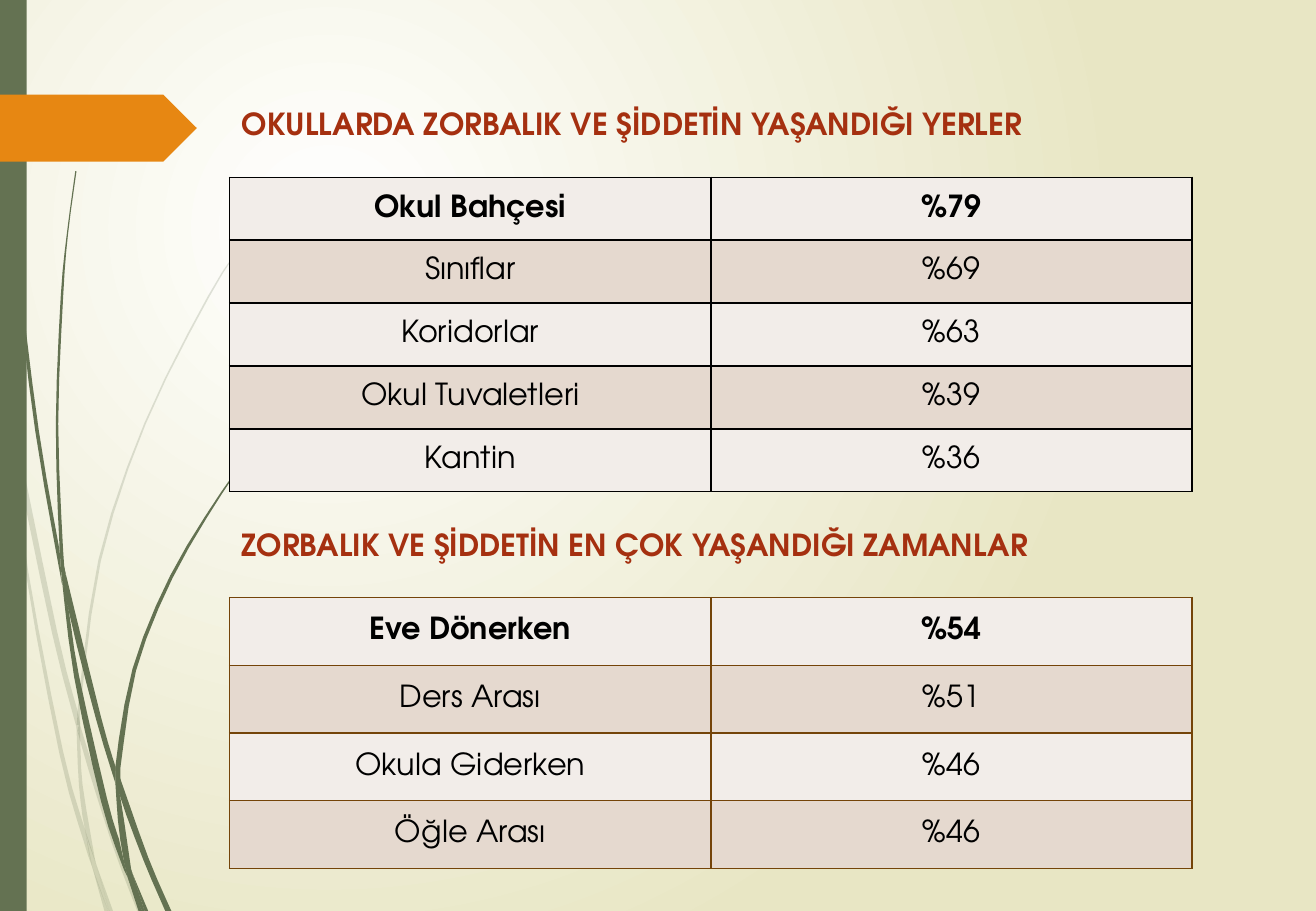
from dataclasses import dataclass

from lxml.etree import Element, SubElement
from pptx import Presentation
from pptx.dml.color import RGBColor as Rgb
from pptx.enum.shapes import MSO_SHAPE as Preset
from pptx.enum.text import MSO_ANCHOR as Anchor, MSO_AUTO_SIZE as AutoSize, PP_ALIGN as Align
from pptx.oxml.ns import qn
from pptx.util import Inches, Pt


@dataclass(frozen=True)
class Theme:
    """Colours, font and sizes of the slide."""
    font: str = "TeX Gyre Adventor"
    text_size: int = 18
    border_width: int = 1
    glow: str = "FFFFFF"
    sand: str = "E8E6C4"
    green: str = "647252"
    orange: str = "E78712"
    heading: str = "A53010"
    ink: str = "000000"
    brown: str = "744409"
    row_fills: tuple = ("F2EDE9", "E5D9CF")


SLIDE_WIDTH, SLIDE_HEIGHT = 10.83, 7.5
CONTENT_LEFT, CONTENT_WIDTH = 1.89, 7.92

# Each piece of grass has two edges, listed as (x, y) points in inches.
PALE_GRASS = [
    ([(0.08, 3.5), (0.06, 3.22), (0, 2.82)], [(0, 2.99), (0.08, 3.44)]),
    ([(0.11, 3.45), (0.13, 3.76), (0.43, 5.22), (0.63, 5.99)],
     [(0.64, 5.86), (0.47, 5.2), (0.11, 3.45)]),
    ([(0.66, 5.96), (0.66, 6.1), (0.92, 6.94), (1.13, 7.5)],
     [(1.17, 7.5), (0.96, 6.92), (0.69, 6.07), (0.66, 5.96)]),
    ([(0.79, 7.11), (0.9, 7.5)], [(0.93, 7.5), (0.79, 7.11)]),
    ([(0.08, 3.5), (0.21, 4.7), (0.49, 6.21), (0.69, 6.93), (0.76, 7.14)],
     [(0.7, 6.83), (0.52, 6.19), (0.23, 4.69), (0.13, 3.76), (0.08, 3.5)]),
    ([(0.63, 5.99), (0.65, 6.46), (0.7, 6.83), (0.79, 7.11)],
     [(0.78, 7.06), (0.68, 6.46), (0.66, 6.1), (0.63, 5.99)]),
    ([(2.35, 1.53), (2.02, 1.97), (1.71, 2.44), (1.19, 3.48), (0.81, 4.61),
      (0.64, 5.84), (0.66, 5.96)],
     [(0.66, 5.84), (0.83, 4.62), (1.2, 3.49), (1.72, 2.45), (2.02, 1.98), (2.35, 1.54)]),
    ([(0.76, 7.14), (0.86, 7.5)], [(0.89, 7.5), (0.76, 7.14)]),
    ([(0.64, 5.86), (0.63, 5.99)], [(0.66, 6.1), (0.66, 5.96)]),
    ([(0.7, 6.83), (0.76, 7.14), (0.89, 7.5)], [(0.9, 7.5), (0.79, 7.11), (0.7, 6.83)]),
]
GREEN_GRASS = [
    ([(0.02, 0), (0.06, 1.1), (0.15, 2.33), (0.29, 3.55), (0.51, 4.81)],
     [(0.49, 4.53), (0.32, 3.55), (0.17, 2.32), (0.07, 1.09), (0.03, 0)]),
    ([(0.54, 4.72), (0.57, 5.05), (0.79, 5.92), (0.95, 6.45)],
     [(0.95, 6.31), (0.83, 5.9), (0.54, 4.72)]),
    ([(0.99, 6.41), (0.99, 6.56), (1.18, 7.08), (1.36, 7.5)],
     [(1.41, 7.5), (1.22, 7.06), (0.99, 6.41)]),
    ([(0.51, 4.77), (0.61, 5.57), (0.83, 6.59), (0.99, 7.08), (1.05, 7.22)],
     [(0.98, 6.91), (0.88, 6.57), (0.65, 5.56), (0.57, 5.05), (0.51, 4.77)]),
    ([(0.62, 1.41), (0.55, 1.93), (0.5, 2.45), (0.46, 3.49), (0.49, 4.49), (0.53, 4.72)],
     [(0.54, 4.72), (0.52, 4.53), (0.48, 3.49), (0.52, 2.45), (0.56, 1.93), (0.63, 1.41)]),
    ([(1.09, 7.19), (1.19, 7.5)], [(1.22, 7.5), (1.09, 7.19)]),
    ([(0.49, 4.49), (0.51, 4.77), (0.57, 5.05)], [(0.54, 4.72), (0.49, 4.49)]),
    ([(2.33, 3.44), (2.07, 3.73), (1.82, 4.05), (1.4, 4.74), (1.09, 5.51),
      (0.95, 6.31), (0.99, 6.41)],
     [(0.99, 6.33), (1.12, 5.52), (1.42, 4.76), (1.83, 4.06), (2.07, 3.74), (2.34, 3.44)]),
    ([(1.05, 7.22), (1.14, 7.5)], [(1.17, 7.5), (1.05, 7.22)]),
    ([(0.95, 6.45), (0.99, 6.91), (1.09, 7.19)], [(1.08, 7.16), (0.99, 6.56), (0.95, 6.45)]),
    ([(0.95, 6.31), (0.95, 6.45)], [(0.99, 6.56), (0.99, 6.41)]),
    ([(0.99, 6.91), (1.05, 7.22), (1.17, 7.5)], [(1.19, 7.5), (1.09, 7.19), (0.99, 6.91)]),
]
PLACES = [("Okul Bahçesi", "%79"), ("Sınıflar", "%69"), ("Koridorlar", "%63"),
          ("Okul Tuvaletleri", "%39"), ("Kantin", "%36")]
TIMES = [("Eve Dönerken", "%54"), ("Ders Arası", "%51"),
         ("Okula Giderken", "%46"), ("Öğle Arası", "%46")]


def smooth(points, steps=3):
    """Return points along a Catmull-Rom curve through the given ones."""
    if len(points) == 2:
        return points
    padded = [points[0], *points, points[-1]]
    curve = []
    for corners in zip(padded, padded[1:], padded[2:], padded[3:]):
        for step in range(steps):
            t = step / steps
            curve.append(tuple(
                b + t * (c - a) / 2 + t * t * (a - 2.5 * b + 2 * c - d / 2)
                + t ** 3 * (1.5 * (b - c) + (d - a) / 2)
                for a, b, c, d in zip(*corners)))
    return curve + [points[-1]]


def write_text(frame, text, *, font, size, color, bold=False, align=Align.LEFT):
    """Put one formatted line into a text frame."""
    paragraph = frame.paragraphs[0]
    paragraph.alignment = align
    run = paragraph.add_run()
    run.text = text
    run.font.name, run.font.size, run.font.bold = font, Pt(size), bold
    run.font.color.rgb = Rgb.from_string(color)


class SlideBuilder:
    """Draws styled elements on the current slide."""

    def __init__(self, slide, theme):
        self.slide, self.theme = slide, theme

    def background(self):
        """Fill the slide with a round glow."""
        fill = self.slide.background.fill
        fill.gradient()
        for stop, color in zip(fill.gradient_stops, (self.theme.glow, self.theme.sand)):
            stop.color.rgb = Rgb.from_string(color)
        gradient = next(self.slide.element.iter(qn("a:gradFill")))
        glow = Element(qn("a:path"), path="circle")
        SubElement(glow, qn("a:fillToRect"), l="50000", t="50000", r="100000", b="100000")
        gradient.replace(gradient.find(qn("a:lin")), glow)

    def paint(self, shape, color, opacity=100):
        """Give a shape a plain fill without line or shadow."""
        shape.shadow.inherit = False
        shape.line.fill.background()
        shape.fill.solid()
        shape.fill.fore_color.rgb = Rgb.from_string(color)
        if opacity < 100:
            tone = next(shape.element.spPr.iter(qn("a:srgbClr")))
            SubElement(tone, qn("a:alpha"), val=str(opacity * 1000))

    def grass(self, edges, opacity=100):
        """Draw one piece of grass between two curved edges."""
        outline = [(Inches(x), Inches(y)) for edge in edges for x, y in smooth(edge)]
        pen = self.slide.shapes.build_freeform(*outline[0])
        pen.add_line_segments(outline[1:])
        self.paint(pen.convert_to_shape(), self.theme.green, opacity)

    def block(self, preset, left, top, width, height, color):
        """Draw a plain preset shape."""
        shape = self.slide.shapes.add_shape(
            preset, Inches(left), Inches(top), Inches(width), Inches(height))
        self.paint(shape, color)

    def heading(self, text, top, width):
        """Write a section heading."""
        frame = self.slide.shapes.add_textbox(
            Inches(CONTENT_LEFT), Inches(top), Inches(width), Inches(0.4)).text_frame
        frame.word_wrap = False
        frame.auto_size = AutoSize.SHAPE_TO_FIT_TEXT
        write_text(frame, text, font=self.theme.font, size=self.theme.text_size,
                   color=self.theme.heading, bold=True)

    def border(self, cell, color):
        """Draw a line on all four sides of a cell."""
        properties = cell._tc.get_or_add_tcPr()
        for index, side in enumerate(("a:lnL", "a:lnR", "a:lnT", "a:lnB")):
            line = Element(qn(side), w=str(Pt(self.theme.border_width)))
            SubElement(SubElement(line, qn("a:solidFill")), qn("a:srgbClr"), val=color)
            properties.insert(index, line)

    def table(self, records, top, height, border_color):
        """Draw a banded table with its first row in bold."""
        table = self.slide.shapes.add_table(
            len(records), len(records[0]), Inches(CONTENT_LEFT), Inches(top),
            Inches(CONTENT_WIDTH), Inches(height)).table
        table.first_row = table.horz_banding = False
        for row, record in enumerate(records):
            for column, text in enumerate(record):
                cell = table.cell(row, column)
                cell.vertical_anchor = Anchor.MIDDLE
                cell.fill.solid()
                cell.fill.fore_color.rgb = Rgb.from_string(self.theme.row_fills[row % 2])
                self.border(cell, border_color)
                write_text(cell.text_frame, text, font=self.theme.font,
                           size=self.theme.text_size, color=self.theme.ink,
                           bold=row == 0, align=Align.CENTER)


def main():
    """Build and save the slide."""
    deck = Presentation()
    deck.slide_width, deck.slide_height = Inches(SLIDE_WIDTH), Inches(SLIDE_HEIGHT)
    theme = Theme()
    page = SlideBuilder(deck.slides.add_slide(deck.slide_layouts[6]), theme)
    page.background()
    for pieces, opacity in ((PALE_GRASS, 20), (GREEN_GRASS, 100)):
        for edges in pieces:
            page.grass(edges, opacity)
    page.block(Preset.RECTANGLE, 0, 0, 0.22, SLIDE_HEIGHT, theme.green)
    page.block(Preset.PENTAGON, 0, 0.78, 1.62, 0.55, theme.orange)
    page.heading("OKULLARDA ZORBALIK VE ŞİDDETİN YAŞANDIĞI YERLER", 0.82, 6.75)
    page.table(PLACES, 1.46, 2.59, theme.ink)
    page.heading("ZORBALIK VE ŞİDDETİN EN ÇOK YAŞANDIĞI ZAMANLAR", 4.28, 6.76)
    page.table(TIMES, 4.92, 2.23, theme.brown)
    deck.save("out.pptx")


if __name__ == "__main__":
    main()
